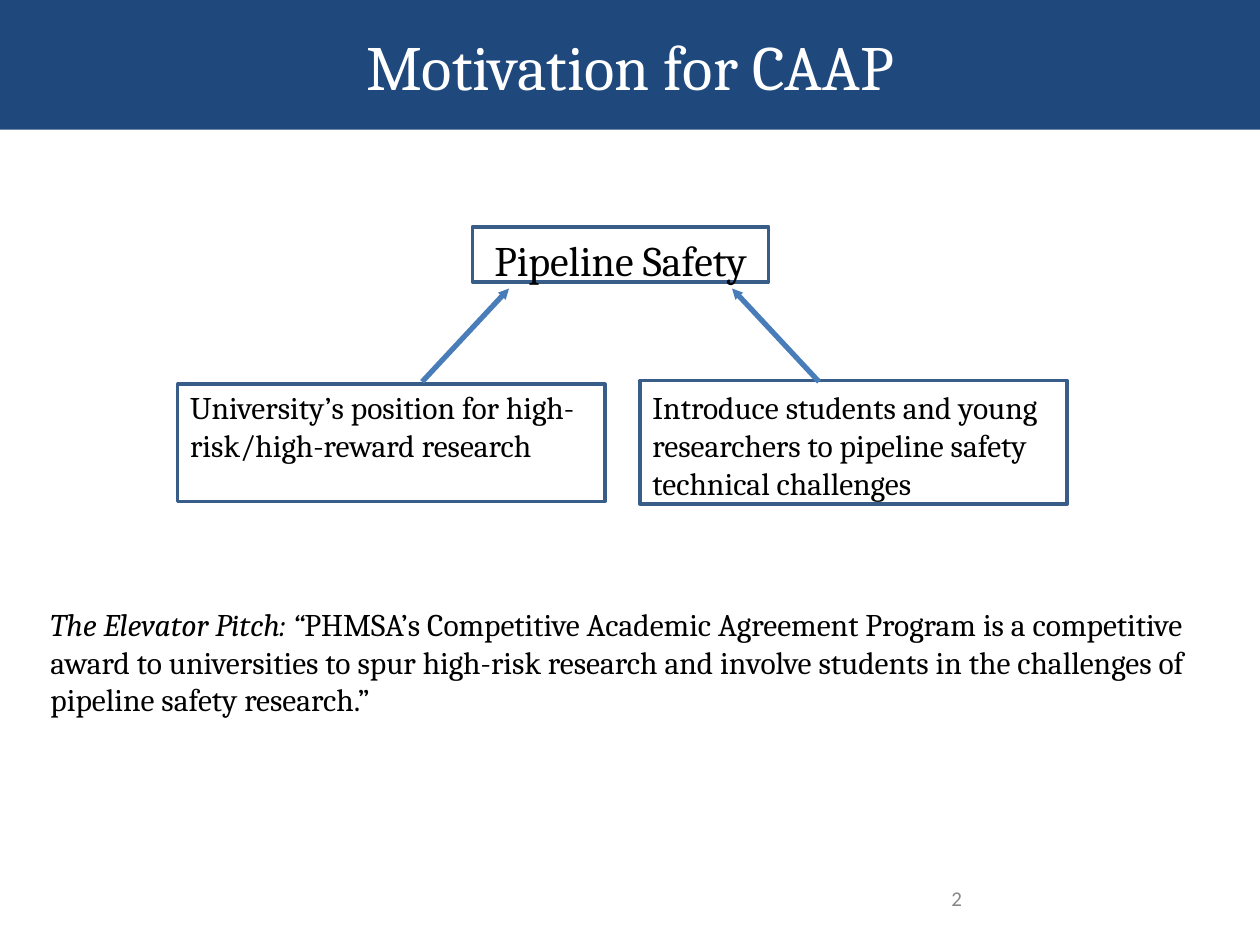
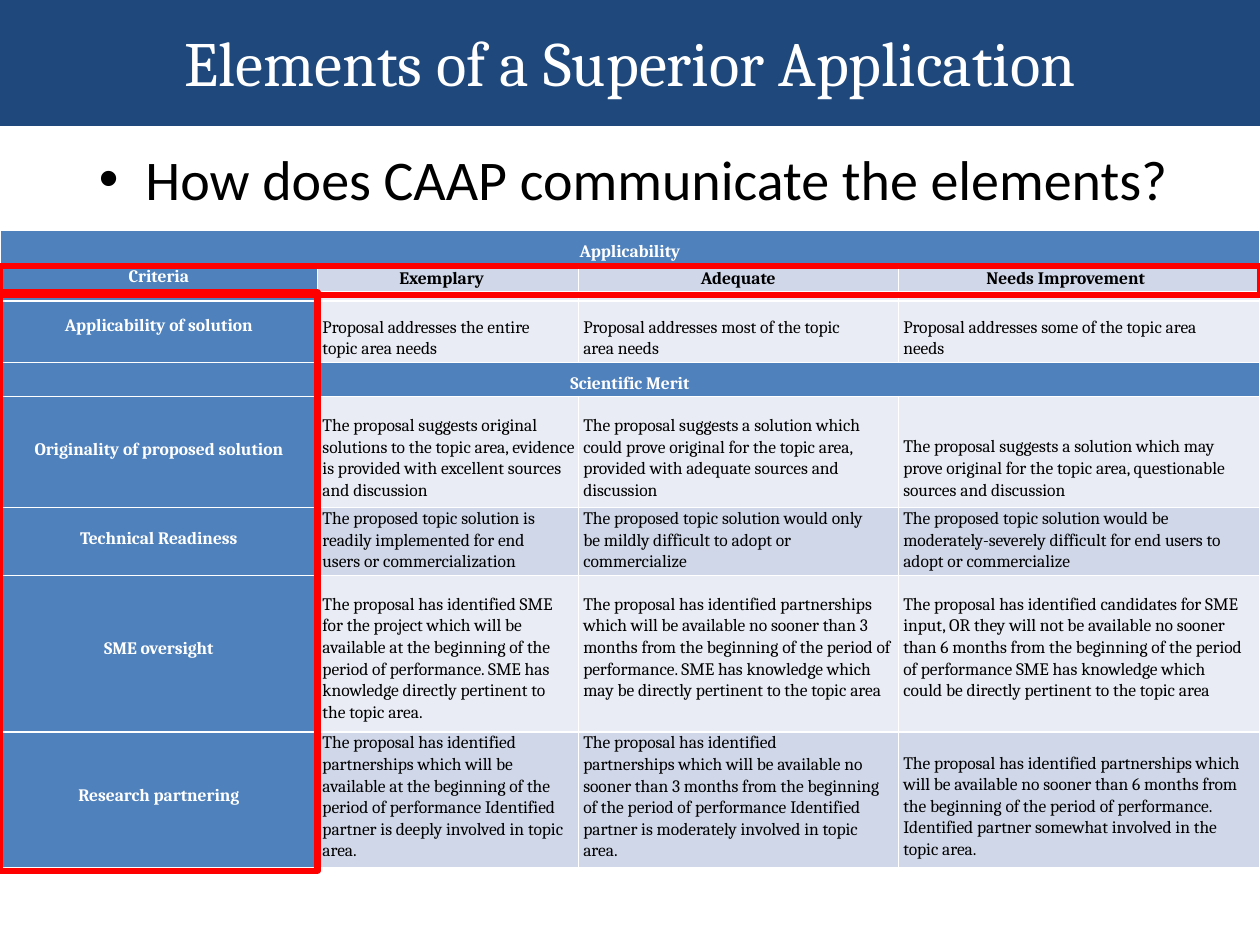
from lxml.etree import SubElement
from pptx import Presentation
from pptx.dml.color import RGBColor
from pptx.enum.shapes import MSO_CONNECTOR, MSO_SHAPE
from pptx.enum.text import MSO_ANCHOR, PP_ALIGN
from pptx.oxml.ns import qn
from pptx.util import Inches, Pt

# Shared style
NAVY, EDGE, ARROW, RED = "1F497D", "385D89", "497DBA", "FF0000"
BLUE, MIST, PALE = "4F81BC", "D0D7E8", "E9ECF4"
WHITE, BLACK, GREY = "FFFFFF", "000000", "888888"
SERIF, SANS = "Cambria", "Calibri"
LEFT, MID = PP_ALIGN.LEFT, PP_ALIGN.CENTER
SIZE = Inches(10), Inches(7.5)
COLS = 100  # square grid: 100 columns by 75 rows


def tint(code):
    return RGBColor.from_string(code)


def unit(count):
    return round(count * SIZE[0] / COLS)


class Deck:
    def __init__(self):
        self.prs = Presentation()
        self.prs.slide_width, self.prs.slide_height = SIZE
        self.page = None

    def slide(self):
        self.page = self.prs.slides.add_slide(self.prs.slide_layouts[6]).shapes

    def label(self, frame, runs, size, color=BLACK, font=SERIF, bold=False,
              align=LEFT, pad=(0, 0, 0, 0), anchor=MSO_ANCHOR.TOP):
        """Fill a frame; runs are (text, italic) pairs, pad is left, top, right, bottom."""
        frame.word_wrap = True
        frame.vertical_anchor = anchor
        (frame.margin_left, frame.margin_top,
         frame.margin_right, frame.margin_bottom) = map(unit, pad)
        para = frame.paragraphs[0]
        para.alignment = align
        for text, slant in runs:
            self.run(para, text, size, color, font, bold, slant)
        return para

    def run(self, para, text, size, color, font, bold=False, slant=False):
        run = para.add_run()
        run.text = text
        face = run.font
        face.size, face.name, face.bold, face.italic = Pt(size), font, bold, slant
        face.color.rgb = tint(color)

    def text(self, at, runs, size, **style):
        box = self.page.add_textbox(*map(unit, at))
        return self.label(box.text_frame, runs, size, **style)

    def rect(self, at, fill=None, line=None, width=2):
        box = self.page.add_shape(MSO_SHAPE.RECTANGLE, *map(unit, at))
        box.shadow.inherit = False
        if fill:
            box.fill.solid()
            box.fill.fore_color.rgb = tint(fill)
        else:
            box.fill.background()
        if line:
            box.line.color.rgb = tint(line)
            box.line.width = Pt(width)
        else:
            box.line.fill.background()
        return box

    def title(self, words, top=0):
        band = self.rect((0, top, COLS, 10.3), fill=NAVY)
        self.label(band.text_frame, [(words, False)], 36, color=WHITE,
                   align=MID, anchor=MSO_ANCHOR.MIDDLE)

    def arrow(self, *ends):
        link = self.page.add_connector(MSO_CONNECTOR.STRAIGHT, *map(unit, ends))
        link.line.color.rgb = tint(ARROW)
        link.line.width = Pt(3)
        props = link._element.spPr
        SubElement(props.find(qn("a:ln")), qn("a:tailEnd"),
                   type="triangle", w="sm", len="sm")
        SubElement(props, qn("a:effectLst"))

    def bullet(self, para, left, hang):
        props = para._p.get_or_add_pPr()
        props.set("marL", str(unit(left)))
        props.set("indent", str(-unit(hang)))
        SubElement(props, qn("a:buFont"), typeface="Arial")
        SubElement(props, qn("a:buChar"), char="•")

    def table(self, at, widths, heights):
        grid = self.page.add_table(len(heights), len(widths), *map(unit, at)).table
        for col, width in zip(grid.columns, widths):
            col.width = unit(width)
        for row, height in zip(grid.rows, heights):
            row.height = unit(height)
        return grid

    def cell(self, cell, fill, words="", top=0, left=0, right=0,
             color=BLACK, bold=False, align=LEFT, lead=None, bare=None):
        cell.margin_left, cell.margin_top = unit(left), unit(top)
        cell.margin_right, cell.margin_bottom = unit(right), 0
        # White borders, except on the bare side
        props = cell._tc.get_or_add_tcPr()
        for side in "LRTB":
            edge = SubElement(props, qn("a:ln" + side), w=str(Pt(1)))
            if side == bare:
                SubElement(edge, qn("a:noFill"))
            else:
                paint = SubElement(edge, qn("a:solidFill"))
                SubElement(paint, qn("a:srgbClr"), val=WHITE)
        cell.fill.solid()
        cell.fill.fore_color.rgb = tint(fill)
        # Text, or a tiny end mark so that the row can stay low
        frame = cell.text_frame
        if not words:
            SubElement(frame.paragraphs[0]._p, qn("a:endParaRPr"), sz="100")
            return
        for i, part in enumerate(words.split("\n")):
            para = frame.add_paragraph() if i else frame.paragraphs[0]
            para.alignment = align
            if lead:
                para.line_spacing = lead
            self.run(para, part, 10, color, SERIF, bold)


# Rubric rows: label, its top, fill, then (text, top, right margin) for each grade
RUBRIC = {
    3: ("Applicability of solution", 1.2, PALE, [
        ("Proposal addresses the entire topic area needs", 1.2, 2.5),
        ("Proposal addresses most of the topic area needs", 1.2, 3.5),
        ("Proposal addresses some of the topic area needs", 1.2, 3.5)]),
    5: ("Originality of proposed solution", 3.4, PALE, [
        ("The proposal suggests original solutions to the topic area, evidence is "
         "provided with excellent sources and discussion", 1.4, 0.2),
        ("The proposal suggests a solution which could prove original for the topic "
         "area, provided with adequate sources and discussion", 1.4, 1),
        ("The proposal suggests a solution which may prove original for the topic "
         "area, questionable sources and discussion", 3.1, 2)]),
    6: ("Technical Readiness", 1.7, MIST, [
        ("The proposed topic solution is\nreadily implemented for end users or "
         "commercialization", 0, 2.5),
        ("The proposed topic solution would only\nbe mildly difficult to adopt or "
         "commercialize", 0, 1),
        ("The proposed topic solution would be\nmoderately-severely difficult for "
         "end users to adopt or commercialize", 0, 2)]),
    7: ("SME oversight", 5, PALE, [
        ("The proposal has identified SME for the project which will be available at "
         "the beginning of the period of performance. SME has knowledge directly "
         "pertinent to the topic area.", 1.4, 1),
        ("The proposal has identified partnerships which will be available no sooner "
         "than 3 months from the beginning of the period of performance. SME has "
         "knowledge which may be directly pertinent to the topic area", 1.4, 0.5),
        ("The proposal has identified candidates for SME input, OR they will not be "
         "available no sooner than 6 months from the beginning of the period of "
         "performance SME has knowledge which could be directly pertinent to the "
         "topic area", 1.4, 1.3)]),
    8: ("Research partnering", 4.3, MIST, [
        ("The proposal has identified\npartnerships which will be available at the "
         "beginning of the period of performance Identified partner is deeply "
         "involved in topic area.", 0, 1),
        ("The proposal has identified\npartnerships which will be available no sooner "
         "than 3 months from the beginning of the period of performance Identified "
         "partner is moderately involved in topic area.", 0, 1),
        ("The proposal has identified partnerships which will be available no sooner "
         "than 6 months from the beginning of the period of performance. Identified "
         "partner somewhat involved in the topic area.", 1.6, 1.3)]),
}
BANDS = {0: "Applicability", 4: "Scientific Merit"}
GRADES = [("Exemplary", 6.5, LEFT), ("Adequate", 0, MID), ("Needs Improvement", 7, LEFT)]


def motive(deck):
    deck.slide()
    deck.text((75.5, 70.3, 2, 2.3), [("2", False)], 12, color=GREY, font=SANS)

    # Goal and its two drivers
    goal = deck.rect((37.5, 18, 23.5, 4.4), line=EDGE)
    deck.label(goal.text_frame, [("Pipeline Safety", False)], 24, align=MID,
               pad=(0, 0.8, 0, 0), anchor=MSO_ANCHOR.MIDDLE)
    for left, top, high, pad, words in (
            (14.1, 30.5, 9.3, 0.3,
             "University’s position for high-risk/high-reward research"),
            (50.8, 30.2, 9.8, 0.6,
             "Introduce students and young researchers to pipeline safety "
             "technical challenges")):
        box = deck.rect((left, top, 33.9, high), line=EDGE)
        deck.label(box.text_frame, [(words, False)], 18, pad=(1, pad, 0, 0))
    deck.arrow(33.5, 30.3, 40.4, 22.9)
    deck.arrow(65, 30.3, 58.1, 22.9)

    # Pitch
    deck.text((3.9, 47.8, 91.5, 9.3), [
        ("The Elevator Pitch: “", True),
        ("PHMSA’s Competitive Academic Agreement Program is a competitive award to "
         "universities to spur high-risk research and involve students in the "
         "challenges of pipeline safety research.”", False)],
        18, pad=(0.1, 0.2, 0, 0))
    deck.title("Motivation for CAAP")


def elements(deck):
    deck.slide()
    para = deck.text((7.4, 11.2, 85.6, 5.6),
                     [("How does CAAP communicate the elements?", False)],
                     32, font=SANS, align=MID, pad=(0, 0.3, 0, 0))
    deck.bullet(para, 3.9, 3.7)

    # Rubric table: the label column has a narrow strip on its right
    grid = deck.table((0, 18.3, COLS, 50.7), (24.6, 0.6, 20.7, 25.4, 28.7),
                      (2.7, 2.2, 0.7, 4.9, 2.7, 8.8, 5.4, 12.4, 10.8))
    head = dict(color=WHITE, bold=True, align=MID)
    for r in range(len(grid.rows)):
        cells = [grid.cell(r, c) for c in range(len(grid.columns))]
        if r in BANDS:
            deck.cell(cells[0], BLUE, BANDS[r], top=0.9, **head)
            for cell in cells[1:]:
                deck.cell(cell, BLUE)
            cells[0].merge(cells[-1])
            continue
        label, top, fill, grades = RUBRIC.get(r, ("", 0, PALE, []))
        if r == 1:
            label, top, fill = "Criteria", 0.2, MIST
        deck.cell(cells[0], BLUE, label, top=top, left=0.6, bare="R", **head)
        deck.cell(cells[1], BLUE, bare="L")
        for i, cell in enumerate(cells[2:]):
            if r == 1:
                words, left, align = GRADES[i]
                deck.cell(cell, fill, words, top=0.3, left=left, bold=True, align=align)
            elif grades:
                words, top, right = grades[i]
                deck.cell(cell, fill, words, top=top, left=0.4, right=right, lead=1.07)
            else:
                deck.cell(cell, fill)

    # Red frames round the criteria row and column
    for at in ((0, 21.1, COLS, 2.3), (0, 23.2, 25.2, 45.9)):
        deck.rect(at, line=RED, width=3.5)
    deck.title("Elements of a Superior Application", top=-0.3)


def main():
    deck = Deck()
    motive(deck)
    elements(deck)
    deck.prs.save("out.pptx")


if __name__ == "__main__":
    main()
